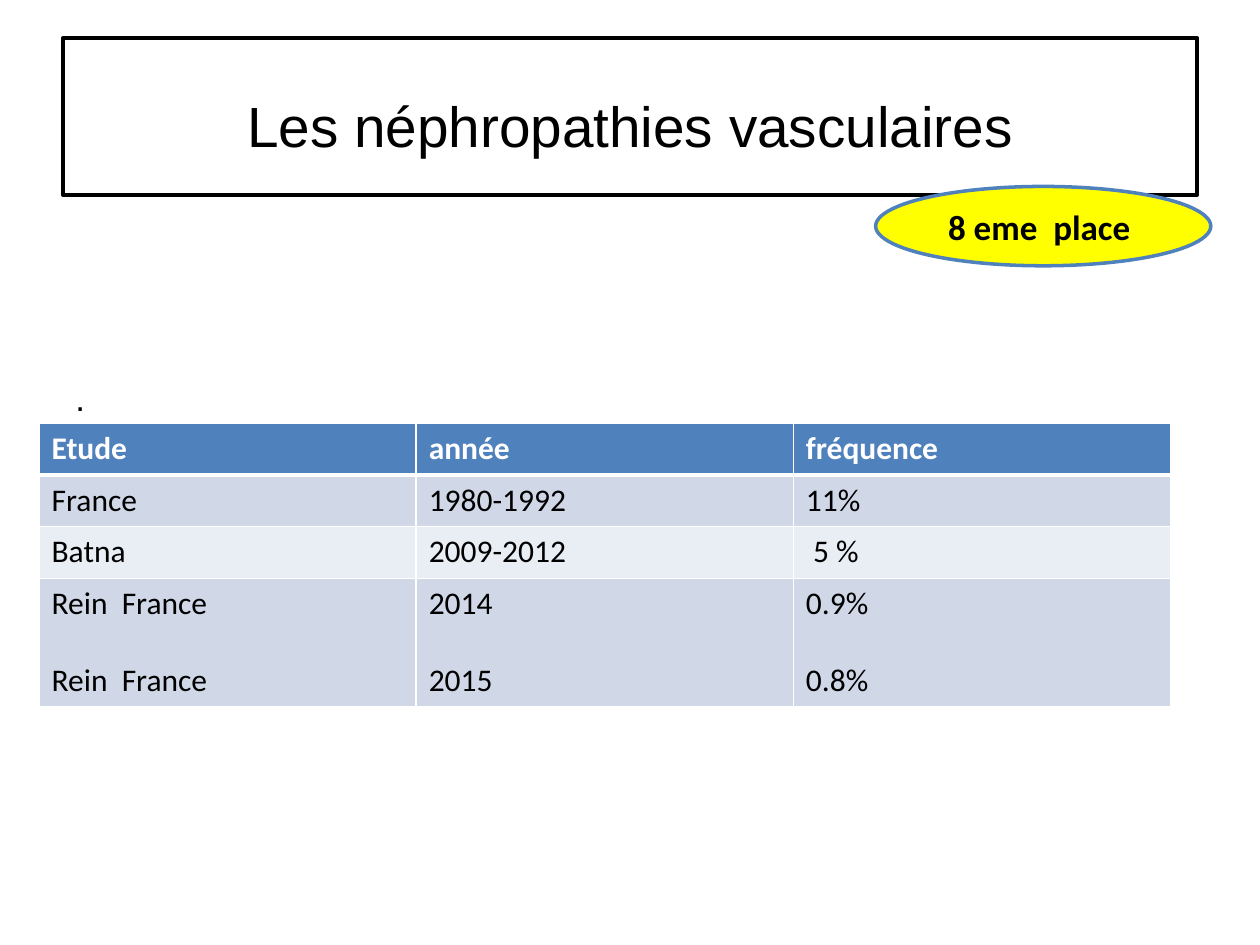
from lxml import etree
from pptx import Presentation
from pptx.dml.color import RGBColor
from pptx.enum import shapes, text
from pptx.oxml.ns import qn
from pptx.util import Inches, Pt

BLACK = RGBColor(0x00, 0x00, 0x00)
WHITE = RGBColor(0xFF, 0xFF, 0xFF)
BLUE = RGBColor(0x4F, 0x81, 0xBD)
BAND_DARK = RGBColor(0xD0, 0xD8, 0xE8)
BAND_LIGHT = RGBColor(0xE9, 0xED, 0xF4)
YELLOW = RGBColor(0xFF, 0xFF, 0x00)

# A line break inside a cell starts a new paragraph
STUDIES = [
    ("Etude", "année", "fréquence"),
    ("France", "1980-1992", "11%"),
    ("Batna", "2009-2012", " 5 %"),
    ("Rein  France\nRein  France", "2014\n2015", "0.9%\n0.8%"),
]
ROW_HEIGHTS = (0.41, 0.41, 0.41, 1.02)


def place(shape, box):
    shape.left, shape.top, shape.width, shape.height = (Inches(x) for x in box)


def format_text(frame, font_name, size, color=BLACK, bold=False, align=None):
    for paragraph in frame.paragraphs:
        paragraph.alignment = align
        for run in paragraph.runs:
            run.font.name = font_name
            run.font.size = Pt(size)
            run.font.bold = bold
            run.font.color.rgb = color


def paint(shape, fill, line):
    shape.fill.solid()
    shape.fill.fore_color.rgb = fill
    shape.line.color.rgb = line
    shape.line.width = Pt(2)


def set_borders(cell, bottom_width):
    properties = cell._tc.get_or_add_tcPr()
    for side, width in (("L", 1), ("R", 1), ("T", 1), ("B", bottom_width)):
        line = etree.SubElement(properties, qn(f"a:ln{side}"), w=str(Pt(width)))
        fill = etree.SubElement(line, qn("a:solidFill"))
        etree.SubElement(fill, qn("a:srgbClr"), val=str(WHITE))


def add_title(slide, box):
    title = slide.shapes.title
    place(title, box)
    paint(title, WHITE, BLACK)
    frame = title.text_frame
    frame.text = "Les néphropathies vasculaires"
    frame.vertical_anchor = text.MSO_ANCHOR.MIDDLE
    frame.margin_top = Inches(0.18)
    format_text(frame, "Arial", 32.4, align=text.PP_ALIGN.CENTER)


def add_body(slide, box):
    frame = slide.shapes.add_textbox(*(Inches(x) for x in box)).text_frame
    frame.word_wrap = True
    frame.margin_top = Inches(1.24)
    frame.text = "."
    format_text(frame, "Arial", 20)


def add_study_table(slide, box):
    table = slide.shapes.add_table(
        len(STUDIES), len(STUDIES[0]), *(Inches(x) for x in box)).table
    for column in table.columns:
        column.width = Inches(box[2] / len(STUDIES[0]))
    for i, (values, height) in enumerate(zip(STUDIES, ROW_HEIGHTS)):
        header = i == 0
        table.rows[i].height = Inches(height)
        for j, value in enumerate(values):
            cell = table.cell(i, j)
            set_borders(cell, 3 if header else 1)
            cell.fill.solid()
            cell.fill.fore_color.rgb = (
                BLUE if header else BAND_DARK if i % 2 else BAND_LIGHT)
            cell.text_frame.text = value
            format_text(cell.text_frame, "Calibri", 18,
                        WHITE if header else BLACK, header)
            for paragraph in cell.text_frame.paragraphs[1:]:
                paragraph.space_before = Pt(22)


def add_rank_badge(slide, box):
    badge = slide.shapes.add_shape(
        shapes.MSO_SHAPE.OVAL, *(Inches(x) for x in box))
    badge.shadow.inherit = False
    paint(badge, YELLOW, BLUE)
    frame = badge.text_frame
    frame.text = "8 eme  place "
    frame.vertical_anchor = text.MSO_ANCHOR.MIDDLE
    format_text(frame, "Calibri", 20, bold=True, align=text.PP_ALIGN.CENTER)


def main():
    presentation = Presentation()
    presentation.slide_width = Inches(10)
    presentation.slide_height = Inches(7.5)
    slide = presentation.slides.add_slide(presentation.slide_layouts[5])
    add_title(slide, (0.5, 0.3, 9, 1.25))
    add_body(slide, (0.5, 1.75, 9, 4.95))
    add_study_table(slide, (0.31, 3.36, 8.98, sum(ROW_HEIGHTS)))
    add_rank_badge(slide, (6.95, 1.48, 2.66, 0.63))
    presentation.save("out.pptx")


if __name__ == "__main__":
    main()
